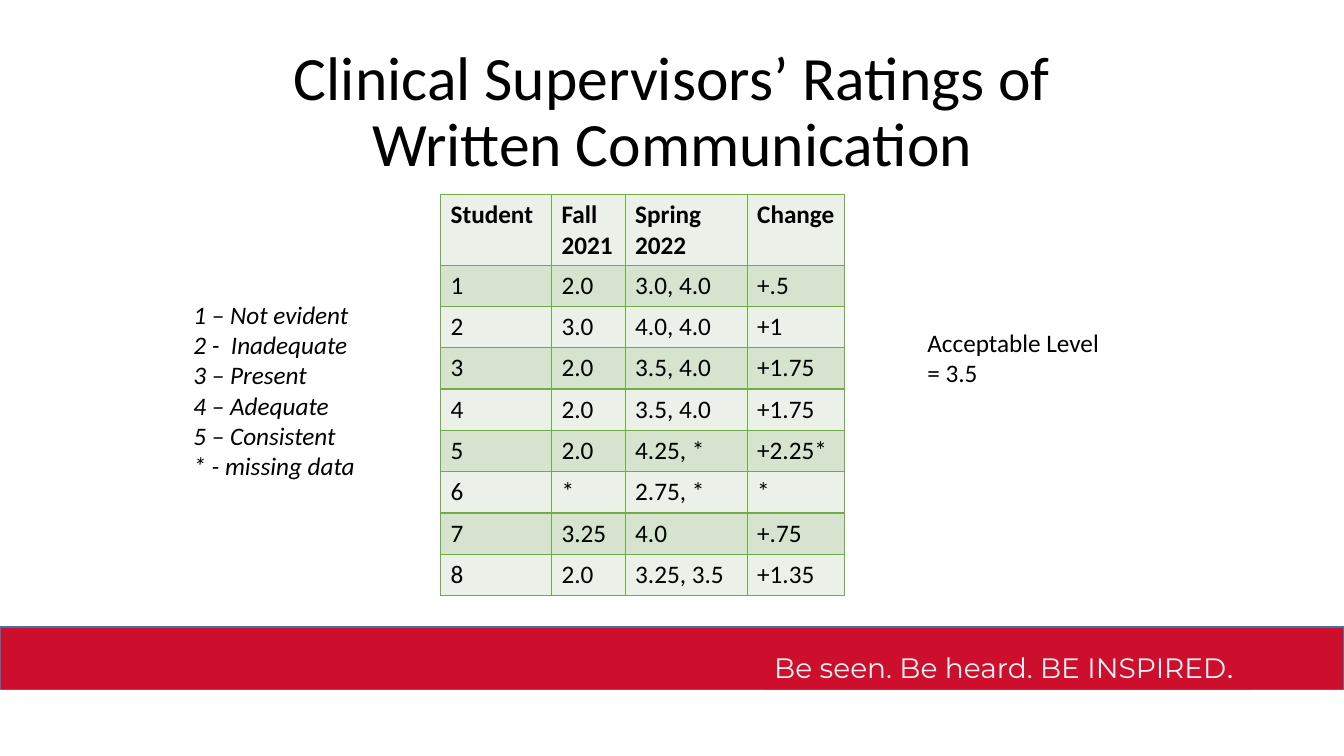
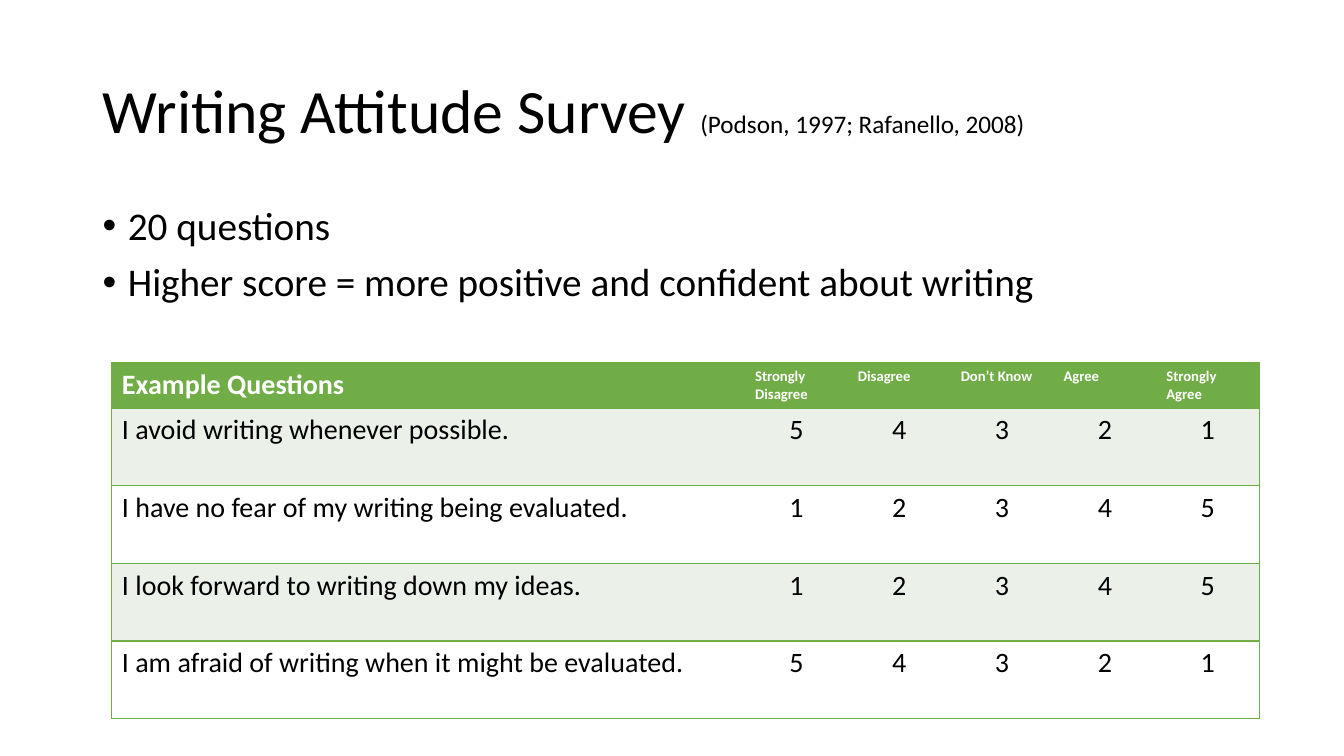
from dataclasses import dataclass

from lxml import etree
from pptx import Presentation
from pptx.dml.color import RGBColor
from pptx.enum.shapes import MSO_SHAPE
from pptx.enum.text import MSO_ANCHOR, PP_ALIGN
from pptx.oxml.ns import qn
from pptx.util import Inches, Pt

RECTANGLE = MSO_SHAPE.RECTANGLE
TOP, MIDDLE = MSO_ANCHOR.TOP, MSO_ANCHOR.MIDDLE
LEFT, CENTER = PP_ALIGN.LEFT, PP_ALIGN.CENTER

BODY_FONT, TAGLINE_FONT = "Calibri", "Montserrat"
COLORS = {
    "text": "000000",
    "white": "FFFFFF",
    "green": "70AD47",
    "pale": "EBF1E9",
    "soft": "D5E3CF",
    "red": "CE0E2D",
    "band_edge": "43739E",
    "tagline": "F2F2F2",
}
TITLE_BOX = (0.92, 0.4, 11.5, 1.45)
TITLE_SIZE = 44
ALL_SIDES = "LRTB"


@dataclass
class TextBlock:
    lines: list[str]
    box: tuple[float, float, float, float]
    size: float
    italic: bool = False
    align: PP_ALIGN = LEFT
    anchor: MSO_ANCHOR = TOP
    line_spacing: float = 1.0
    bulleted: bool = False


@dataclass
class Grid:
    rows: list[list[str]]
    left: float
    top: float
    widths: list[float]
    header_height: float
    row_height: float
    size: float
    header_fill: str
    header_color: str
    row_fills: tuple[str, str]
    header_sizes: tuple[float, float]  # first column, other columns
    value_align: PP_ALIGN = LEFT
    column_rules: bool = True


def rgb(name: str) -> RGBColor:
    return RGBColor.from_string(COLORS[name])


def style_font(font, size: float, color: str = "text", bold: bool = False,
               italic: bool = False, name: str = BODY_FONT) -> None:
    font.name, font.size = name, Pt(size)
    font.bold, font.italic = bold, italic
    font.color.rgb = rgb(color)


def add_bullet(paragraph) -> None:
    properties = paragraph._p.get_or_add_pPr()
    properties.set("marL", str(Inches(0.25)))
    properties.set("indent", str(Inches(-0.25)))
    etree.SubElement(properties, qn("a:buFont"), typeface="Arial")
    etree.SubElement(properties, qn("a:buChar"), char="•")


def add_text(slide, block: TextBlock):
    """Draw one paragraph per line and return the text frame."""
    frame = slide.shapes.add_textbox(*map(Inches, block.box)).text_frame
    frame.word_wrap = True
    frame.vertical_anchor = block.anchor
    for index, line in enumerate(block.lines):
        paragraph = frame.paragraphs[0] if index == 0 else frame.add_paragraph()
        paragraph.text = line
        paragraph.alignment = block.align
        paragraph.line_spacing = block.line_spacing
        if block.bulleted:
            paragraph.space_before = Pt(10)
            add_bullet(paragraph)
        style_font(paragraph.font, block.size, italic=block.italic)
    return frame


def add_title(slide, title: str, align: PP_ALIGN = LEFT, citation: str = "") -> None:
    frame = add_text(slide, TextBlock([title], TITLE_BOX, TITLE_SIZE, align=align,
                                      anchor=MIDDLE, line_spacing=0.9))
    if citation:
        run = frame.paragraphs[0].add_run()
        run.text = citation
        run.font.size = Pt(18)


def set_borders(cell, visible: str) -> None:
    """Rule the given sides (letters of LRTB) in green and clear the others."""
    properties = cell._tc.get_or_add_tcPr()
    for position, side in enumerate(ALL_SIDES):
        line = etree.Element(qn(f"a:ln{side}"), w=str(Pt(1)))
        if side in visible:
            fill = etree.SubElement(line, qn("a:solidFill"))
            etree.SubElement(fill, qn("a:srgbClr"), val=COLORS["green"])
        else:
            etree.SubElement(line, qn("a:noFill"))
        properties.insert(position, line)


def add_grid(slide, grid: Grid) -> None:
    heights = [grid.header_height] + [grid.row_height] * (len(grid.rows) - 1)
    table = slide.shapes.add_table(
        len(heights), len(grid.widths), Inches(grid.left), Inches(grid.top),
        Inches(sum(grid.widths)), Inches(sum(heights))).table
    table.first_row = table.horz_banding = False
    for column, width in zip(table.columns, grid.widths):
        column.width = Inches(width)
    last = len(grid.widths) - 1
    for r, values in enumerate(grid.rows):
        table.rows[r].height = Inches(heights[r])
        is_header = r == 0
        for c, value in enumerate(values):
            cell = table.cell(r, c)
            cell.fill.solid()
            cell.fill.fore_color.rgb = rgb(
                grid.header_fill if is_header else grid.row_fills[(r - 1) % 2])
            sides = "TB" + "L" * (c == 0) + "R" * (c == last)
            set_borders(cell, ALL_SIDES if grid.column_rules else sides)
            paragraph = cell.text_frame.paragraphs[0]
            paragraph.text = value
            paragraph.alignment = LEFT if is_header or c == 0 else grid.value_align
            if is_header:
                style_font(paragraph.font, grid.header_sizes[min(c, 1)],
                           grid.header_color, bold=True)
            else:
                style_font(paragraph.font, grid.size)


def add_bar(slide, box: tuple[float, float, float, float]):
    bar = slide.shapes.add_shape(RECTANGLE, *map(Inches, box))
    bar.shadow.inherit = False
    bar.fill.solid()
    bar.fill.fore_color.rgb = rgb("red")
    bar.line.fill.background()
    return bar


def add_tagline_band(slide) -> None:
    band = add_bar(slide, (0, 6.22, 13.33, 0.62))
    band.line.color.rgb = rgb("band_edge")
    band.line.width = Pt(1)
    tagline = add_bar(slide, (7.58, 6.4, 4.85, 0.44))
    paragraph = tagline.text_frame.paragraphs[0]
    paragraph.alignment = LEFT
    paragraph.text = "Be seen. Be heard. BE INSPIRED"
    style_font(paragraph.font, 20, "tagline", name=TAGLINE_FONT)
    period = paragraph.add_run()
    period.text = "."
    period.font.name = BODY_FONT


RATINGS = Grid(
    rows=[
        ["Student", "Fall 2021", "Spring 2022", "Change"],
        ["1", "2.0", "3.0, 4.0", "+.5"],
        ["2", "3.0", "4.0, 4.0", "+1"],
        ["3", "2.0", "3.5, 4.0", "+1.75"],
        ["4", "2.0", "3.5, 4.0", "+1.75"],
        ["5", "2.0", "4.25, *", "+2.25*"],
        ["6", "*", "2.75, *", "*"],
        ["7", "3.25", "4.0", "+.75"],
        ["8", "2.0", "3.25, 3.5", "+1.35"],
    ],
    left=4.37, top=1.93, widths=[1.1, 0.73, 1.21, 0.97],
    header_height=0.7, row_height=0.41, size=18,
    header_fill="pale", header_color="text", row_fills=("soft", "pale"),
    header_sizes=(18, 18),
)

ASCENDING = ["1", "2", "3", "4", "5"]
DESCENDING = ASCENDING[::-1]
SURVEY = Grid(
    rows=[
        ["Example Questions", "Strongly Disagree", "Disagree", "Don’t Know", "Agree",
         "Strongly Agree"],
        ["I avoid writing whenever possible.", *DESCENDING],
        ["I have no fear of my writing being evaluated.", *ASCENDING],
        ["I look forward to writing down my ideas.", *ASCENDING],
        ["I am afraid of writing when it might be evaluated.", *DESCENDING],
    ],
    left=1.11, top=3.6, widths=[6.28] + [1.02] * 5,
    header_height=0.45, row_height=0.77, size=20,
    header_fill="green", header_color="white", row_fills=("pale", "white"),
    header_sizes=(20, 10.5), value_align=CENTER, column_rules=False,
)

RATING_KEY = TextBlock(
    ["1 – Not evident", "2 -  Inadequate", "3 – Present", "4 – Adequate",
     "5 – Consistent", "* - missing data"],
    (1.82, 2.92, 3.39, 1.92), 18, italic=True)
ACCEPTABLE_LEVEL = TextBlock(["Acceptable Level = 3.5"], (9.1, 3.2, 1.9, 0.71), 18)
SURVEY_POINTS = TextBlock(
    ["20 questions", "Higher score = more positive and confident about writing"],
    (0.92, 2, 11.5, 1.4), 28, line_spacing=0.9, bulleted=True)


def build_ratings_slide(slide) -> None:
    add_title(slide, "Clinical Supervisors’ Ratings of\nWritten Communication", CENTER)
    add_text(slide, RATING_KEY)
    add_text(slide, ACCEPTABLE_LEVEL)
    add_grid(slide, RATINGS)
    add_tagline_band(slide)


def build_survey_slide(slide) -> None:
    add_title(slide, "Writing Attitude Survey ",
              citation="(Podson, 1997; Rafanello, 2008)")
    add_text(slide, SURVEY_POINTS)
    add_grid(slide, SURVEY)


def main() -> None:
    deck = Presentation()
    deck.slide_width, deck.slide_height = Inches(13.33), Inches(7.5)
    blank = deck.slide_layouts[6]
    for build in (build_ratings_slide, build_survey_slide):
        build(deck.slides.add_slide(blank))
    deck.save("out.pptx")


if __name__ == "__main__":
    main()
